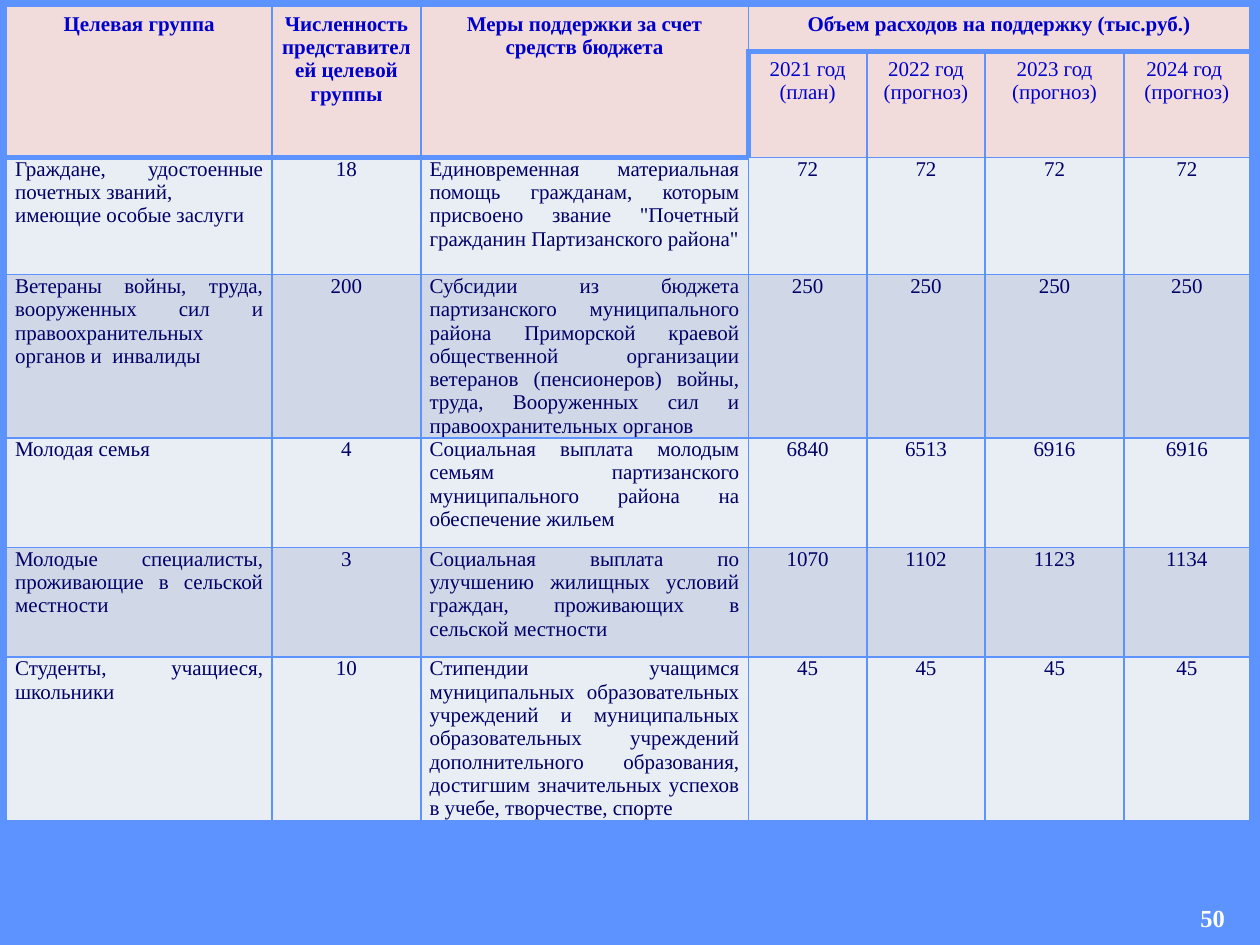
import pptx
import pptx.dml.color
import pptx.enum.text
import pptx.oxml
import pptx.oxml.ns
import pptx.util

Inches = pptx.util.Inches
Pt = pptx.util.Pt
RGBColor = pptx.dml.color.RGBColor
Align = pptx.enum.text.PP_ALIGN
Anchor = pptx.enum.text.MSO_ANCHOR

SKY = RGBColor(0x5D, 0x93, 0xFF)
ROSE = RGBColor(0xF2, 0xDC, 0xDB)
PALE = RGBColor(0xE9, 0xED, 0xF4)
STEEL = RGBColor(0xD0, 0xD8, 0xE8)
BLUE = RGBColor(0x00, 0x00, 0xCC)
NAVY = RGBColor(0x00, 0x00, 0x66)
WHITE = RGBColor(0xFF, 0xFF, 0xFF)
FONT = "Times New Roman"

COLUMN_WIDTHS = [2.11, 1.18, 2.6, 0.94, 0.94, 1.1, 1]
ROW_HEIGHTS = [0.36, 0.83, 0.93, 1.29, 0.87, 0.87, 1.29]
HEADINGS = [
    "Целевая группа",
    "Численность представителей целевой группы",
    "Меры поддержки за счет средств бюджета",
]
EXPENSES = "Объем расходов на поддержку (тыс.руб.)"
YEARS = ["2021 год (план)", "2022 год (прогноз)", "2023 год\n(прогноз)", "2024 год \n(прогноз)"]
GROUPS = [
    ("Граждане, удостоенные почетных званий, \nимеющие особые заслуги", 18,
     "Единовременная материальная помощь гражданам, которым присвоено звание "
     "\"Почетный гражданин Партизанского района\"",
     72, 72, 72, 72),
    ("Ветераны войны, труда, вооруженных сил и правоохранительных органов и  инвалиды", 200,
     "Субсидии из бюджета партизанского муниципального района Приморской краевой "
     "общественной организации ветеранов (пенсионеров) войны, труда, Вооруженных сил "
     "и правоохранительных органов",
     250, 250, 250, 250),
    ("Молодая семья", 4,
     "Социальная выплата молодым семьям партизанского муниципального района "
     "на обеспечение жильем",
     6840, 6513, 6916, 6916),
    ("Молодые специалисты, проживающие в сельской местности", 3,
     "Социальная выплата по улучшению жилищных условий граждан, "
     "проживающих в сельской местности",
     1070, 1102, 1123, 1134),
    ("Студенты, учащиеся, школьники", 10,
     "Стипендии учащимся муниципальных образовательных учреждений и муниципальных "
     "образовательных учреждений дополнительного образования, достигшим значительных "
     "успехов в учебе, творчестве, спорте",
     45, 45, 45, 45),
]


def write_text(frame, text, *, size=12, color=NAVY, bold=False, align=Align.CENTER):
    for index, line in enumerate(text.split("\n")):
        para = frame.paragraphs[0] if index == 0 else frame.add_paragraph()
        para.alignment = align
        span = para.add_run()
        span.text = line
        span.font.name = FONT
        span.font.size = Pt(size)
        span.font.bold = bold
        span.font.color.rgb = color


class SlideBuilder:
    def __init__(self, page, border_color):
        self.page = page
        self.border_color = border_color

    def background(self, color):
        fill = self.page.background.fill
        fill.solid()
        fill.fore_color.rgb = color

    def table(self, left, top, widths, heights):
        frame = self.page.shapes.add_table(
            len(heights), len(widths), Inches(left), Inches(top),
            Inches(sum(widths)), Inches(sum(heights)))
        table = frame.table
        table.first_row = False
        table.horz_banding = False
        for column, width in zip(table.columns, widths):
            column.width = Inches(width)
        for row, height in zip(table.rows, heights):
            row.height = Inches(height)
        return table

    def cell(self, cell, text, fill, *, padding=0, thick="", **style):
        cell.margin_left = cell.margin_right = Inches(0.07)
        cell.margin_top = cell.margin_bottom = Inches(padding)
        properties = cell._tc.get_or_add_tcPr()
        for side in "LRTB":
            width = Pt(3 if side in thick else 1)
            properties.append(pptx.oxml.parse_xml(
                f'<a:ln{side} {pptx.oxml.ns.nsdecls("a")} w="{width}"><a:solidFill>'
                f'<a:srgbClr val="{self.border_color}"/></a:solidFill></a:ln{side}>'))
        cell.fill.solid()
        cell.fill.fore_color.rgb = fill
        if text:
            write_text(cell.text_frame, text, **style)

    def text(self, left, top, width, height, text, **style):
        box = self.page.shapes.add_textbox(
            Inches(left), Inches(top), Inches(width), Inches(height))
        box.text_frame.word_wrap = True
        box.text_frame.vertical_anchor = Anchor.BOTTOM
        write_text(box.text_frame, text, **style)


def fill_header(builder, table):
    first_year = len(HEADINGS)
    for column, heading in enumerate(HEADINGS):
        table.cell(0, column).merge(table.cell(1, column))
        builder.cell(table.cell(0, column), heading, ROSE,
                     padding=0.05, thick="B", color=BLUE, bold=True)
        builder.cell(table.cell(1, column), "", ROSE, thick="B")
    table.cell(0, first_year).merge(table.cell(0, first_year + len(YEARS) - 1))
    for index, year in enumerate(YEARS):
        column = first_year + index
        builder.cell(table.cell(0, column), "" if index else EXPENSES, ROSE,
                     padding=0.05, thick="B", color=BLUE, bold=True)
        builder.cell(table.cell(1, column), year, ROSE,
                     padding=0.05, thick="T" if index else "LT", color=BLUE)


def fill_groups(builder, table):
    for index, group in enumerate(GROUPS):
        for column, value in enumerate(group):
            builder.cell(
                table.cell(index + 2, column), str(value), STEEL if index % 2 else PALE,
                thick="T" if index == 0 and column < len(HEADINGS) else "",
                align=Align.JUSTIFY if isinstance(value, str) else Align.CENTER)


def main():
    deck = pptx.Presentation()
    deck.slide_width = Inches(10)
    deck.slide_height = Inches(7.5)
    builder = SlideBuilder(deck.slides.add_slide(deck.slide_layouts[6]), SKY)
    builder.background(SKY)
    table = builder.table(0.05, 0.05, COLUMN_WIDTHS, ROW_HEIGHTS)
    fill_header(builder, table)
    fill_groups(builder, table)
    builder.text(9.38, 7.14, 0.44, 0.31, "50",
                 size=14, color=WHITE, bold=True, align=Align.RIGHT)
    deck.save("out.pptx")


if __name__ == "__main__":
    main()
